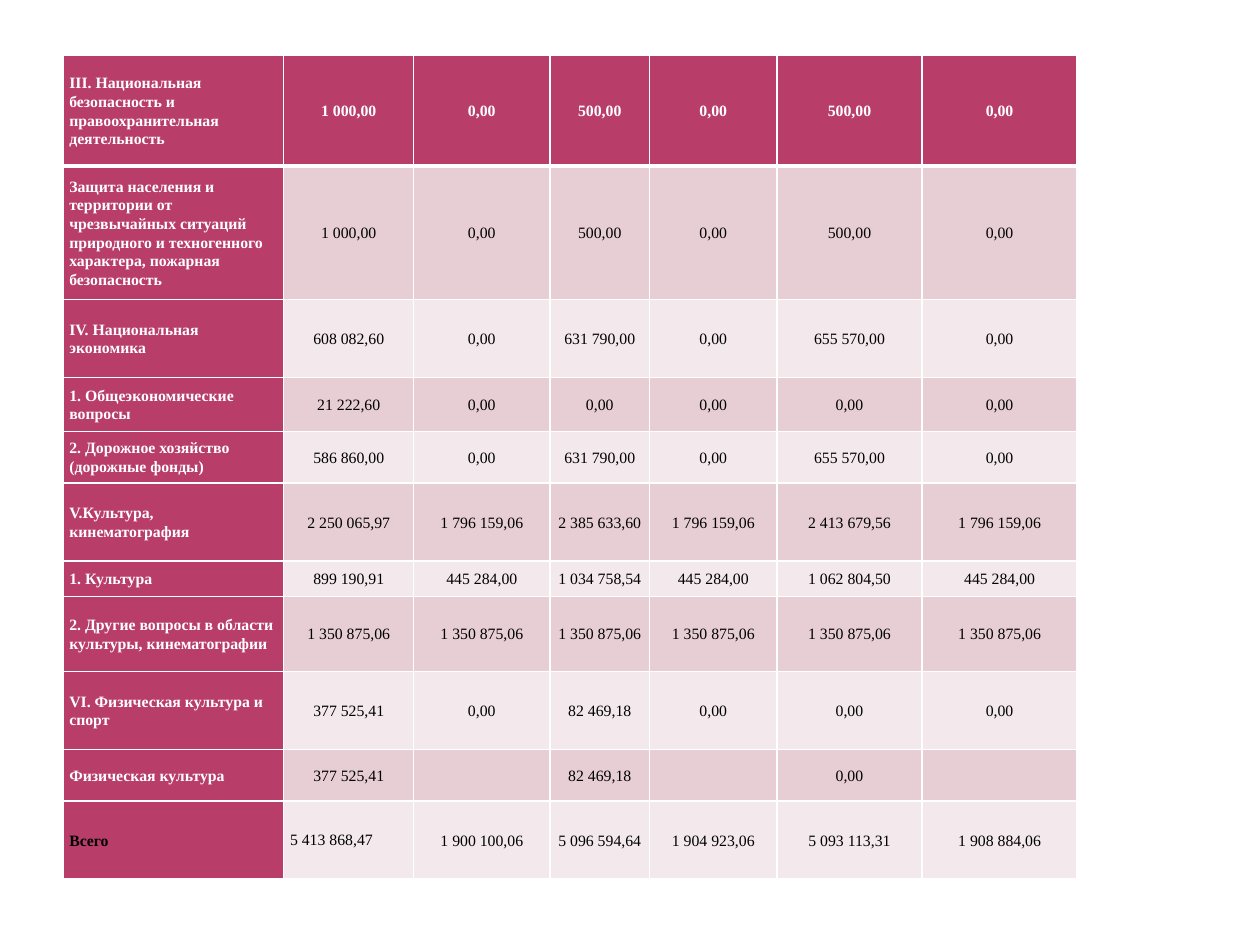
from lxml import etree
from pptx import Presentation
from pptx import util as u
from pptx.dml.color import RGBColor
from pptx.enum import text
from pptx.oxml.ns import qn

FONT = "Times New Roman"
WHITE, BLACK, ACCENT = "FFFFFF", "000000", "B83D68"
BANDS = ["F3E8EB", "E6CED4"]  # even and odd body rows
COLUMNS = [1.75, 1.03, 1.08, 0.79, 1.01, 1.15, 1.23]

# Row height, section name, six amounts
ROWS = [
    (0.88, "III. Национальная безопасность и правоохранительная деятельность",
     ["1 000,00", "0,00", "500,00", "0,00", "500,00", "0,00"]),
    (1.06, "Защита населения и территории от чрезвычайных ситуаций природного "
           "и техногенного характера, пожарная безопасность",
     ["1 000,00", "0,00", "500,00", "0,00", "500,00", "0,00"]),
    (0.62, "IV. Национальная экономика",
     ["608 082,60", "0,00", "631 790,00", "0,00", "655 570,00", "0,00"]),
    (0.43, "1. Общеэкономические вопросы",
     ["21 222,60", "0,00", "0,00", "0,00", "0,00", "0,00"]),
    (0.41, "2. Дорожное хозяйство (дорожные фонды)",
     ["586 860,00", "0,00", "631 790,00", "0,00", "655 570,00", "0,00"]),
    (0.62, "V.Культура, кинематография",
     ["2 250 065,97", "1 796 159,06", "2 385 633,60", "1 796 159,06",
      "2 413 679,56", "1 796 159,06"]),
    (0.28, "1. Культура",
     ["899 190,91", "445 284,00", "1 034 758,54", "445 284,00",
      "1 062 804,50", "445 284,00"]),
    (0.6, "2. Другие вопросы в области культуры, кинематографии",
     ["1 350 875,06"] * 6),
    (0.62, "VI. Физическая культура и спорт",
     ["377 525,41", "0,00", "82 469,18", "0,00", "0,00", "0,00"]),
    (0.41, "Физическая культура",
     ["377 525,41", "", "82 469,18", "", "0,00", ""]),
    (0.62, "Всего",
     ["5 413 868,47", "1 900 100,06", "5 096 594,64", "1 904 923,06",
      "5 093 113,31", "1 908 884,06"]),
]


def rgb(color):
    return RGBColor.from_string(color)


def set_borders(cell, **widths):
    tcPr = cell._tc.get_or_add_tcPr()
    for side in "LRTB":
        ln = etree.SubElement(tcPr, qn(f"a:ln{side}"),
                              w=str(u.Pt(widths.get(side, 1))))
        fill = etree.SubElement(ln, qn("a:solidFill"))
        etree.SubElement(fill, qn("a:srgbClr"), val=WHITE)


def write_cell(cell, words, color, bold, align, spacing):
    cell.vertical_anchor = text.MSO_ANCHOR.MIDDLE
    cell.margin_left = cell.margin_right = u.Inches(0.05)
    cell.margin_top = cell.margin_bottom = 0
    if not words:
        return
    p = cell.text_frame.paragraphs[0]
    p.alignment, p.line_spacing = align, spacing
    r = p.add_run()
    r.text = words
    r.font.name, r.font.size, r.font.bold = FONT, u.Pt(9), bold
    r.font.color.rgb = rgb(color)


def budget_table(s, left, top, width, height):
    table = s.shapes.add_table(len(ROWS), len(COLUMNS), left, top,
                               width, height).table
    for column, share in zip(table.columns, COLUMNS):
        column.width = int(width * share / sum(COLUMNS))
    total_height = sum(row[0] for row in ROWS)
    last = len(ROWS) - 1

    for i, (share, name, amounts) in enumerate(ROWS):
        table.rows[i].height = int(height * share / total_height)
        for j, words in enumerate([name, *amounts]):
            cell = table.cell(i, j)
            strong = i == 0 or j == 0
            # Thick rule between the heading row and the body
            rule = {0: {"B": 3}, 1: {"T": 3}}.get(i, {})
            set_borders(cell, **rule)
            cell.fill.solid()
            cell.fill.fore_color.rgb = rgb(ACCENT if strong else BANDS[i % 2])
            # The first grand total stands at the left, singly spaced
            grand_total = (i, j) == (last, 1)
            at_left = j == 0 or grand_total
            write_cell(cell, words,
                       WHITE if strong and i != last else BLACK, strong,
                       text.PP_ALIGN.LEFT if at_left else text.PP_ALIGN.CENTER,
                       1.0 if grand_total else 1.07)


def main():
    prs = Presentation()
    prs.slide_width, prs.slide_height = u.Inches(10), u.Inches(7.5)
    s = prs.slides.add_slide(prs.slide_layouts[6])
    budget_table(s, u.Inches(0.5), u.Inches(0.44),
                 u.Inches(8.05), u.Inches(6.54))
    prs.save("out.pptx")


if __name__ == "__main__":
    main()
